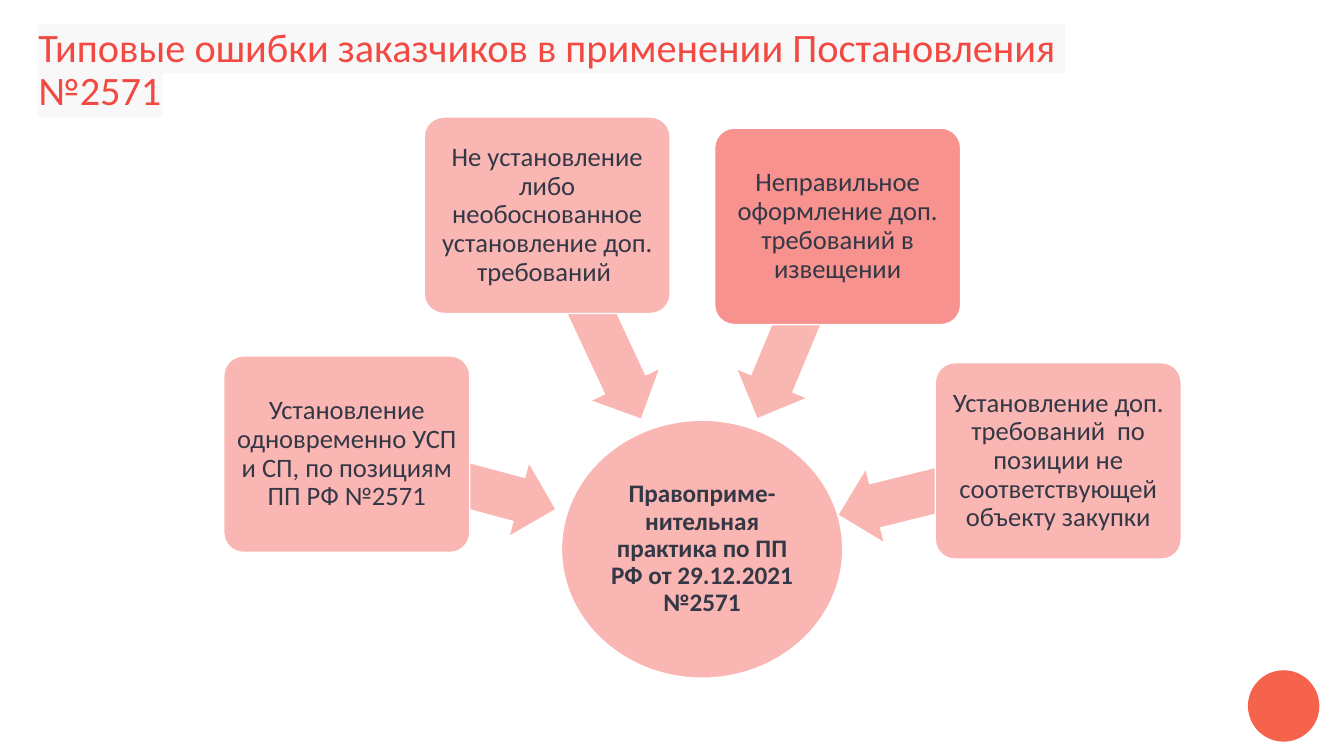
import pptx
import pptx.dml.color
import pptx.enum.shapes
import pptx.enum.text
import pptx.oxml
import pptx.oxml.ns
import pptx.util
from pptx.util import Cm

RGBColor = pptx.dml.color.RGBColor
MSO_SHAPE = pptx.enum.shapes.MSO_SHAPE
PP_ALIGN = pptx.enum.text.PP_ALIGN
MSO_ANCHOR = pptx.enum.text.MSO_ANCHOR

PINK = RGBColor(0xFA, 0xB6, 0xB3)
SOFT_PINK = RGBColor(0xF9, 0xB7, 0xB2)
DEEP_PINK = RGBColor(0xF7, 0x92, 0x8E)
CORAL = RGBColor(0xF5, 0x63, 0x4D)
RED = RGBColor(0xF2, 0x49, 0x42)
DARK = RGBColor(0x34, 0x38, 0x46)
WHITE = RGBColor(0xFF, 0xFF, 0xFF)
PALE_GREY = "F8F8F8"

CARD_WIDTH, CARD_HEIGHT = 6.2, 4.95
ARROW_HEIGHT = 1.85

# Card: left, top, fill, text; its arrow: left, top, length, rotation, fill
CAUSES = [
    ((5.64, 8.97, PINK, "Установление одновременно УСП и СП, по позициям ПП РФ №2571"),
     (8.64, 11.2, 5.44, 195, PINK)),
    ((10.69, 2.95, PINK,
      "Не установление либо необоснованное установление доп. требований "),
     (12.14, 7.06, 5.64, 245, PINK)),
    ((18.01, 3.23, DEEP_PINK, "Неправильное оформление доп. требований в извещении"),
     (17.48, 7.19, 5.23, 292.6, SOFT_PINK)),
    ((23.57, 9.14, PINK,
      "Установление доп. требований  по позиции не соответствующей объекту закупки"),
     (21.06, 11.4, 5.38, 346.1, PINK)),
]


class SlideBuilder:
    """Holds the text style and the current slide."""

    def __init__(self, slide, font_name="Calibri", line_spacing=0.9):
        self.slide = slide
        self.font_name = font_name
        self.line_spacing = line_spacing

    def add_text(self, shape, text, size, color, align, anchor, insets, bold=False):
        frame = shape.text_frame
        frame.word_wrap = True
        frame.auto_size = pptx.enum.text.MSO_AUTO_SIZE.NONE
        frame.vertical_anchor = anchor
        (frame.margin_left, frame.margin_top,
         frame.margin_right, frame.margin_bottom) = [Cm(inset) for inset in insets]
        paragraph = frame.paragraphs[0]
        paragraph.alignment = align
        paragraph.line_spacing = self.line_spacing
        run = paragraph.add_run()
        run.text = text
        run.font.name = self.font_name
        run.font.size = pptx.util.Pt(size)
        run.font.bold = bold
        run.font.color.rgb = color
        return run

    def title(self, text, left, top, width, height):
        title = self.slide.shapes.title
        title.left, title.top = Cm(left), Cm(top)
        title.width, title.height = Cm(width), Cm(height)
        run = self.add_text(title, text, 28.8, RED, PP_ALIGN.LEFT, MSO_ANCHOR.TOP,
                            (0, 0.13, 0.25, 0.13))
        highlight = pptx.oxml.parse_xml(
            f'<a:highlight {pptx.oxml.ns.nsdecls("a")}>'
            f'<a:srgbClr val="{PALE_GREY}"/></a:highlight>')
        fill = run.font._element.find(pptx.oxml.ns.qn("a:solidFill"))
        fill.addnext(highlight)

    def shape(self, kind, left, top, width, height, fill, outlined=False):
        shape = self.slide.shapes.add_shape(
            kind, Cm(left), Cm(top), Cm(width), Cm(height))
        shape.shadow.inherit = False
        shape.fill.solid()
        shape.fill.fore_color.rgb = fill
        if outlined:
            shape.line.color.rgb = WHITE
            shape.line.width = pptx.util.Pt(1)
        else:
            shape.line.fill.background()
        return shape

    def label(self, shape, text, size, inset, bold=False):
        self.add_text(shape, text, size, DARK, PP_ALIGN.CENTER, MSO_ANCHOR.MIDDLE,
                      (inset,) * 4, bold)

    def arrow(self, left, top, length, rotation, fill):
        arrow = self.shape(MSO_SHAPE.LEFT_ARROW, left, top, length, ARROW_HEIGHT, fill)
        arrow.adjustments[0] = 0.6
        arrow.adjustments[1] = 0.5
        arrow.rotation = rotation

    def card(self, left, top, fill, text):
        card = self.shape(MSO_SHAPE.ROUNDED_RECTANGLE, left, top,
                          CARD_WIDTH, CARD_HEIGHT, fill, outlined=True)
        card.adjustments[0] = 0.1
        self.label(card, text, 19, 0.1)


def main():
    presentation = pptx.Presentation()
    presentation.slide_width = Cm(33.87)
    presentation.slide_height = Cm(19.05)
    slide = presentation.slides.add_slide(presentation.slide_layouts[5])
    builder = SlideBuilder(slide)

    # Title and corner circle
    builder.title("Типовые ошибки заказчиков в применении Постановления  №2571",
                  0.97, 0.56, 29.08, 1.83)
    builder.shape(MSO_SHAPE.OVAL, 31.45, 16.89, 1.8, 1.8, CORAL)

    # Central topic
    hub = builder.shape(MSO_SHAPE.OVAL, 14.15, 10.59, 7.09, 6.5, PINK, outlined=True)
    builder.label(hub, "Правоприме-нительная практика по ПП РФ от 29.12.2021 №2571",
                  18, 0.03, bold=True)

    # Typical mistakes pointing at the topic
    for card, arrow in CAUSES:
        builder.arrow(*arrow)
        builder.card(*card)

    presentation.save("out.pptx")


if __name__ == "__main__":
    main()
